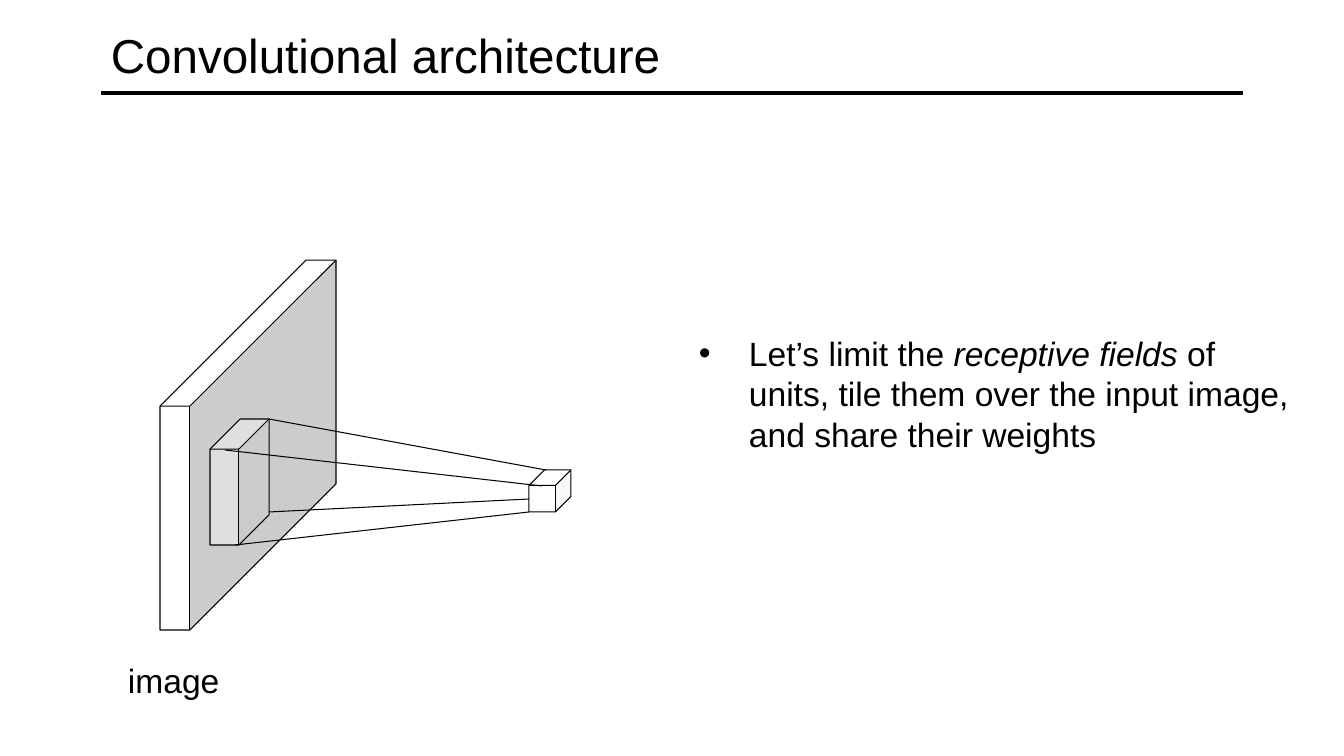
"""Build the slide on convolutional architecture and receptive fields."""
from lxml.etree import SubElement
from pptx import Presentation
from pptx.dml.color import RGBColor
from pptx.enum.shapes import MSO_CONNECTOR, MSO_SHAPE
from pptx.enum.text import MSO_ANCHOR
from pptx.oxml.ns import qn
from pptx.util import Emu, Pt

COLORS = {"ink": "000000", "paper": "FFFFFF"}
SCALE = 914400 / 100.8


def px(*sizes):
    return [Emu(round(size * SCALE)) for size in sizes]


def write(box, runs, size=24, wrap=True, anchor=MSO_ANCHOR.TOP, bullet=None, indent=0):
    frame = slide.shapes.add_textbox(*px(*box)).text_frame
    frame.word_wrap = wrap
    frame.vertical_anchor = anchor
    para = frame.paragraphs[0]
    if bullet:
        props = para._p.get_or_add_pPr()
        gap = px(indent)[0]
        props.set("marL", str(gap))
        props.set("indent", str(-gap))
        SubElement(props, qn("a:buFont"), typeface="Arial")
        SubElement(props, qn("a:buChar"), char=bullet)
    for text, slant in runs:
        run = para.add_run()
        run.text = text
        run.font.name = "Arial"
        run.font.size = Pt(size)
        run.font.italic = slant
        run.font.color.rgb = RGBColor.from_string(COLORS["ink"])


deck = Presentation()
deck.slide_width, deck.slide_height = px(1344, 756)
slide = deck.slides.add_slide(deck.slide_layouts[6])

image = ((160, 260, 176, 370), 0.83, 100)
field = ((210, 419, 59, 126), 0.51, 39)
unit = ((529, 470, 42, 42), 0.37, 13)
title_rule = ((101, 93, 1243, 93), 3)
rays = [
    ((269, 419, 546, 470), 0.75),
    ((225, 450, 542, 486), 0.75),
    ((235, 545, 529, 512), 0.75),
    ((269, 512, 529, 499), 0.75),
]

for kind, part in [
    ("line", title_rule),
    ("cube", image),
    ("cube", field),
    *[("line", ray) for ray in rays],
    ("cube", unit),
]:
    if kind == "line":
        ends, width = part
        line = slide.shapes.add_connector(MSO_CONNECTOR.STRAIGHT, *px(*ends))
        line.line.color.rgb = RGBColor.from_string(COLORS["ink"])
        line.line.width = Pt(width)
        SubElement(line._element.spPr, qn("a:effectLst"))
    else:
        box, depth, alpha = part
        cube = slide.shapes.add_shape(MSO_SHAPE.CUBE, *px(*box))
        cube.adjustments[0] = depth
        cube.shadow.inherit = False
        cube.fill.solid()
        cube.fill.fore_color.rgb = RGBColor.from_string(COLORS["paper"])
        cube.line.color.rgb = RGBColor.from_string(COLORS["ink"])
        cube.line.width = Pt(0.75)
        if alpha < 100:
            tint = cube._element.spPr.find(qn("a:solidFill"))[0]
            SubElement(tint, qn("a:alpha"), val=str(alpha * 1000))

write((101, 8, 1142, 93), [("Convolutional architecture", False)],
      size=34, anchor=MSO_ANCHOR.MIDDLE)
write((118, 655, 113, 50), [("image", False)], wrap=False)
write(
    (689, 328, 622, 269),
    [
        ("Let’s limit the ", False),
        ("receptive fields ", True),
        ("of units, tile them over the input image, and share their weights", False),
    ],
    bullet="•",
    indent=50,
)

deck.save("out.pptx")
